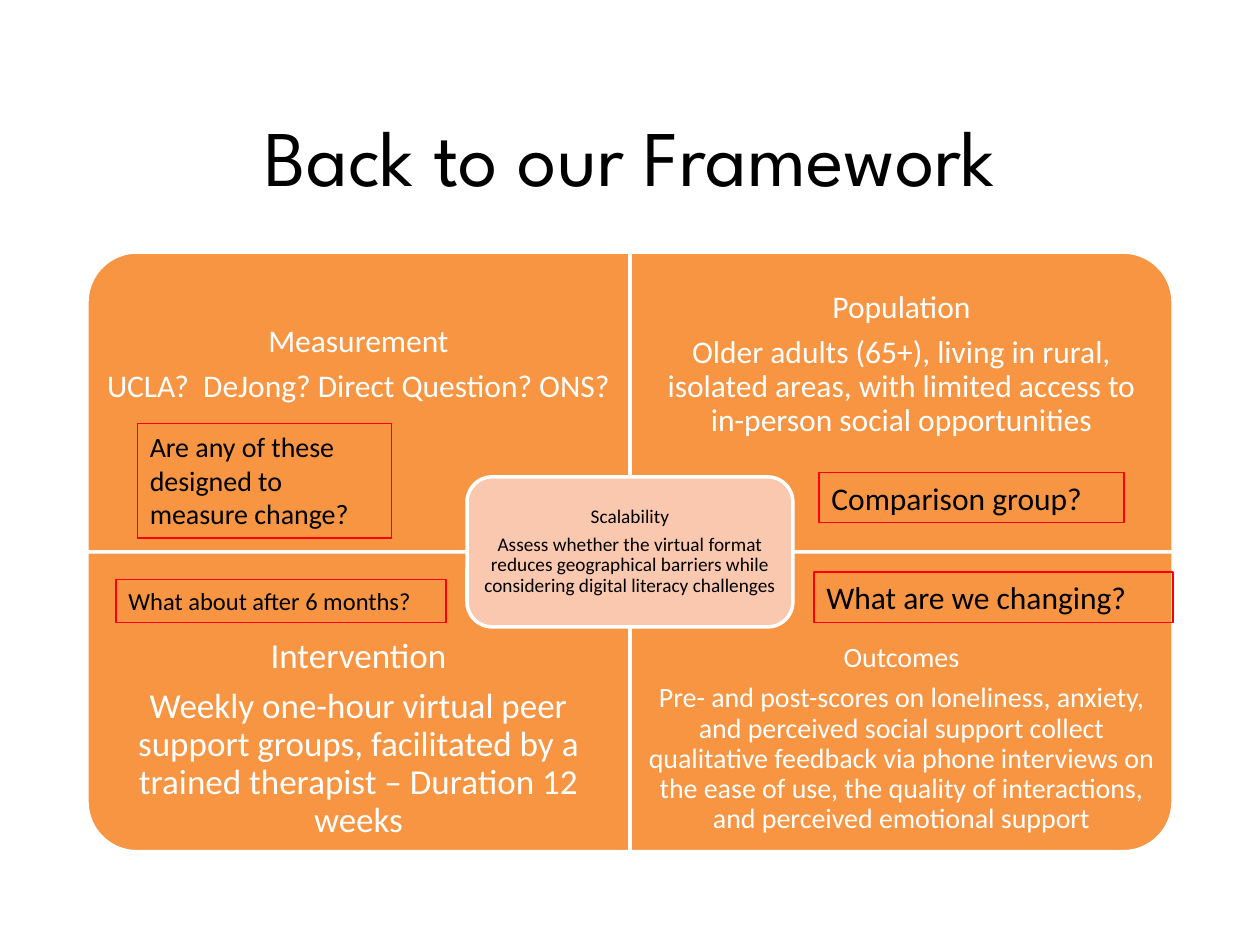
from dataclasses import dataclass

from pptx import Presentation
from pptx.dml.color import RGBColor
from pptx.enum.shapes import MSO_SHAPE as Shape
from pptx.enum.text import MSO_ANCHOR as Anchor, MSO_AUTO_SIZE as AutoSize, PP_ALIGN as Align
from pptx.util import Inches, Pt

WHITE, BLACK, ORANGE, PEACH, RED = "FFFFFF", "000000", "F79543", "FAC8AE", "FF0000"

QUADRANTS = [
    (0, 0, 270, 18, 0.14, "Measurement", "UCLA?  DeJong? Direct Question? ONS?"),
    (1, 0, 0, 18, 0.14, "Population",
     "Older adults (65+), living in rural, isolated areas, with limited access to "
     "in-person social opportunities"),
    (0, 1, 180, 20, 0.16, "Intervention",
     "Weekly one-hour virtual peer support groups, facilitated by a trained therapist "
     "– Duration 12 weeks"),
    (1, 1, 90, 16, 0.12, "Outcomes",
     "Pre- and post-scores on loneliness, anxiety, and perceived social support collect "
     "qualitative feedback via phone interviews on the ease of use, the quality of "
     "interactions, and perceived emotional support"),
]


@dataclass
class Box:
    """A rectangle in inches."""
    left: float
    top: float
    width: float
    height: float

    def emu(self):
        """Return the sides as lengths."""
        return [Inches(side) for side in (self.left, self.top, self.width, self.height)]

    def turned(self):
        """Return the box with its sides swapped about the same centre."""
        shift = (self.width - self.height) / 2
        return Box(self.left + shift, self.top - shift, self.height, self.width)


def rgb(color):
    """Turn a hex string into a colour."""
    return RGBColor.from_string(color)


def write(frame, *lines, size, color=BLACK, font="Calibri", align=Align.CENTER,
          anchor=Anchor.MIDDLE, margins=(0.1, 0.05), spacing=None, gap=0):
    """Fill a text frame with one paragraph per line."""
    frame.word_wrap = True
    frame.auto_size = AutoSize.NONE
    frame.vertical_anchor = anchor
    frame.margin_left = frame.margin_right = Inches(margins[0])
    frame.margin_top = frame.margin_bottom = Inches(margins[1])
    for index, line in enumerate(lines):
        paragraph = frame.paragraphs[0] if index == 0 else frame.add_paragraph()
        paragraph.alignment = align
        paragraph.line_spacing = spacing
        paragraph.space_before = Pt(gap if index else 0)
        run = paragraph.add_run()
        run.text = line
        run.font.size = Pt(size)
        run.font.name = font
        run.font.color.rgb = rgb(color)


def add_panel(slide, kind, box, line, width, fill=None, rotation=0):
    """Draw an outlined shape covering the box after its rotation."""
    sides = box.turned() if rotation % 180 else box
    panel = slide.shapes.add_shape(kind, *sides.emu())
    panel.shadow.inherit = False
    panel.rotation = rotation
    panel.line.color.rgb = rgb(line)
    panel.line.width = Pt(width)
    if fill:
        panel.fill.solid()
        panel.fill.fore_color.rgb = rgb(fill)
    else:
        panel.fill.background()
    return panel


def add_title(slide, box, text):
    """Place the slide title."""
    title = slide.shapes.add_textbox(*box.emu())
    write(title.text_frame, text, size=45, font="League Spartan")


def add_topic(slide, box, heading, detail, size, inset, color):
    """Place a heading and its detail in the box."""
    topic = slide.shapes.add_textbox(*box.emu())
    write(topic.text_frame, heading, detail, size=size, color=color,
          margins=(inset, inset), spacing=0.9, gap=round(0.35 * size, 1))


def add_matrix(slide, box):
    """Draw four quadrants with a card over their common corner."""
    width, height = box.width / 2, box.height / 2
    text_height = height * 0.75
    for column, row, rotation, size, inset, heading, detail in QUADRANTS:
        quadrant = Box(box.left + column * width, box.top + row * height, width, height)
        add_panel(slide, Shape.ROUND_1_RECTANGLE, quadrant, WHITE, 2, ORANGE, rotation)
        text_top = quadrant.top + row * (height - text_height)
        add_topic(slide, Box(quadrant.left, text_top, width, text_height),
                  heading, detail, size, inset, WHITE)
    card_width, card_height = width * 0.6, height / 2
    add_scalability(slide, Box(box.left + width - card_width / 2,
                               box.top + height - card_height / 2, card_width, card_height))


def add_scalability(slide, box):
    """Draw the central card."""
    add_panel(slide, Shape.ROUNDED_RECTANGLE, box, WHITE, 2, PEACH)
    edge = 0.06
    inner = Box(box.left + edge, box.top + edge, box.width - 2 * edge, box.height - 2 * edge)
    add_topic(slide, inner, "Scalability",
              "Assess whether the virtual format reduces geographical barriers while "
              "considering digital literacy challenges", 11, 0.05, BLACK)


def add_question(slide, box, text, size):
    """Draw a red-framed question."""
    question = add_panel(slide, Shape.RECTANGLE, box, RED, 0.75)
    write(question.text_frame, text, size=size, align=Align.LEFT, anchor=Anchor.TOP)


def main():
    """Build and save the slide."""
    deck = Presentation()
    deck.slide_width, deck.slide_height = Inches(10), Inches(7.5)
    slide = deck.slides.add_slide(deck.slide_layouts[6])
    add_title(slide, Box(0.69, 0.61, 8.62, 1.24), "Back to our Framework")
    add_matrix(slide, Box(0.69, 2, 8.62, 4.76))
    add_question(slide, Box(6.5, 3.75, 2.42, 0.4), "Comparison group?", 18)
    add_question(slide, Box(6.46, 4.54, 2.85, 0.4), "What are we changing?", 18)
    add_question(slide, Box(1.09, 3.36, 2.02, 0.91),
                 "Are any of these designed to measure change?", 16)
    add_question(slide, Box(0.92, 4.6, 2.62, 0.34), "What about after 6 months?", 14)
    deck.save("out.pptx")


if __name__ == "__main__":
    main()
